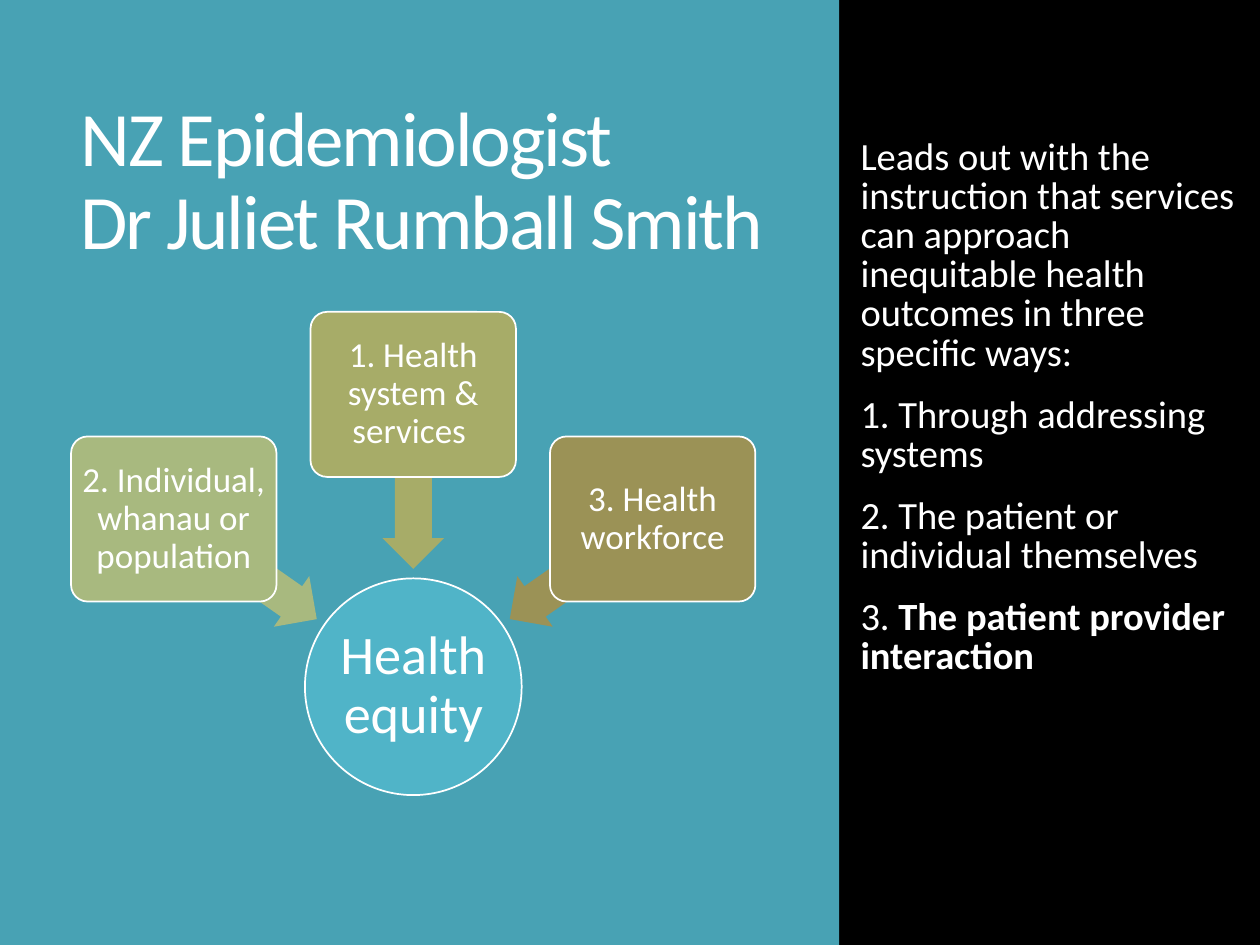
from dataclasses import dataclass
from math import cos, radians, sin

from lxml.etree import SubElement
from pptx import Presentation
from pptx.dml.color import RGBColor
from pptx.enum.shapes import MSO_SHAPE
from pptx.enum.text import MSO_ANCHOR, PP_ALIGN
from pptx.oxml.ns import qn
from pptx.shapes.autoshape import Shape
from pptx.slide import Slide
from pptx.text.text import TextFrame, _Run
from pptx.util import Inches, Pt


@dataclass(frozen=True)
class Theme:
    font: str = "Calibri"
    ink: str = "FFFFFF"
    back: str = "000000"
    blue: str = "50B4C8"
    title: int = 44
    hub: int = 31
    side: int = 22
    card: int = 20


@dataclass(frozen=True)
class Spoke:
    text: str
    angle: int
    color: str


@dataclass(frozen=True)
class Box:
    x: float
    y: float
    w: float
    h: float

    def place(self) -> tuple[int, ...]:
        return tuple(cells(n) for n in (self.x, self.y, self.w, self.h))


THEME = Theme()
COLS = 10
WIDE, HIGH = Inches(10), Inches(7.5)
ROWS = COLS * HIGH / WIDE

HUB_X, HUB_Y, HUB_SIZE = 3.28, 5.45, 1.72
CARD_W, CARD_H, CARD_REACH = 1.63, 1.31, 2.32
ARROW_W, ARROW_H, ARROW_REACH = 1.39, 0.49, 1.63

SPOKES = [
    Spoke("2. Individual, whanau or population", 215, "A8B97F"),
    Spoke("1. Health system & services ", 270, "A7AC68"),
    Spoke("3. Health workforce", 325, "9B9256"),
]
POINTS = [
    ("Leads out with the instruction that services can approach "
     "inequitable health outcomes in three specific ways:", ""),
    ("1. Through addressing systems", ""),
    ("2. The patient or individual themselves", ""),
    ("3. ", "The patient provider interaction"),
]


def cells(count: float) -> int:
    return round(count * WIDE / COLS)


def orbit(angle: int, reach: float, w: float, h: float) -> Box:
    x = HUB_X + reach * cos(radians(angle))
    y = HUB_Y + reach * sin(radians(angle))
    return Box(x - w / 2, y - h / 2, w, h)


def style(run: _Run, size: int, bold: bool = False) -> None:
    run.font.name = THEME.font
    run.font.size = Pt(size)
    run.font.bold = bold
    run.font.color.rgb = RGBColor.from_string(THEME.ink)


def inset(frame: TextFrame, size: float) -> None:
    frame.margin_left = frame.margin_right = cells(size)
    frame.margin_top = frame.margin_bottom = cells(size)


def draw(slide: Slide, kind: MSO_SHAPE, box: Box, color: str,
         edge: bool = False) -> Shape:
    shape = slide.shapes.add_shape(kind, *box.place())
    shape.shadow.inherit = False
    shape.fill.solid()
    shape.fill.fore_color.rgb = RGBColor.from_string(color)
    if edge:
        shape.line.color.rgb = RGBColor.from_string(THEME.ink)
        shape.line.width = Pt(1)
    else:
        shape.line.fill.background()
    return shape


def label(shape: Shape, text: str, size: int, gap: float) -> None:
    frame = shape.text_frame
    frame.text = text
    frame.word_wrap = True
    frame.vertical_anchor = MSO_ANCHOR.MIDDLE
    inset(frame, gap)
    line = frame.paragraphs[0]
    line.alignment = PP_ALIGN.CENTER
    line.line_spacing = 0.9
    style(line.runs[0], size)


def add_panel(slide: Slide) -> None:
    panel = draw(slide, MSO_SHAPE.RECTANGLE, Box(0, 0, 6.66, ROWS), THEME.blue)
    color = panel.fill._xPr.find(qn("a:solidFill"))[0]
    SubElement(color, qn("a:alpha")).set("val", "90000")


def add_title(slide: Slide) -> None:
    title = slide.shapes.title
    slide.shapes._spTree.append(title._element)
    title.left, title.top, title.width, title.height = Box(0.54, 0.55, 5.92, 1.81).place()
    frame = title.text_frame
    frame.text = "NZ Epidemiologist \vDr Juliet Rumball Smith"
    frame.vertical_anchor = MSO_ANCHOR.MIDDLE
    line = frame.paragraphs[0]
    line.alignment = PP_ALIGN.LEFT
    line.line_spacing = 0.9
    for run in line.runs:
        style(run, THEME.title)
        run.font._element.set("spc", "-120")


def add_side(slide: Slide) -> None:
    frame = slide.shapes.add_textbox(*Box(6.63, 0, 3.37, 7.29).place()).text_frame
    frame.word_wrap = True
    frame.margin_left, frame.margin_top = cells(0.2), cells(1.1)
    for row, (plain, strong) in enumerate(POINTS):
        line = frame.add_paragraph() if row else frame.paragraphs[0]
        line.text = plain
        line.line_spacing = 0.85
        line.space_before = Pt(13 if row else 0)
        style(line.runs[0], THEME.side)
        if strong:
            run = line.add_run()
            run.text = strong
            style(run, THEME.side, bold=True)


def add_wheel(slide: Slide) -> None:
    hub = draw(slide, MSO_SHAPE.OVAL, orbit(0, 0, HUB_SIZE, HUB_SIZE), THEME.blue, edge=True)
    label(hub, "Health equity", THEME.hub, 0.02)
    for spoke in SPOKES:
        spot = orbit(spoke.angle, ARROW_REACH, ARROW_W, ARROW_H)
        arrow = draw(slide, MSO_SHAPE.LEFT_ARROW, spot, spoke.color)
        arrow.rotation = spoke.angle
        arrow.adjustments[0] = 0.6
        spot = orbit(spoke.angle, CARD_REACH, CARD_W, CARD_H)
        card = draw(slide, MSO_SHAPE.ROUNDED_RECTANGLE, spot, spoke.color, edge=True)
        card.adjustments[0] = 0.1
        label(card, spoke.text, THEME.card, 0.04)


def main() -> None:
    deck = Presentation()
    deck.slide_width, deck.slide_height = WIDE, HIGH
    slide = deck.slides.add_slide(deck.slide_layouts[5])
    slide.background.fill.solid()
    slide.background.fill.fore_color.rgb = RGBColor.from_string(THEME.back)
    add_panel(slide)
    add_title(slide)
    add_side(slide)
    add_wheel(slide)
    deck.save("out.pptx")


if __name__ == "__main__":
    main()
